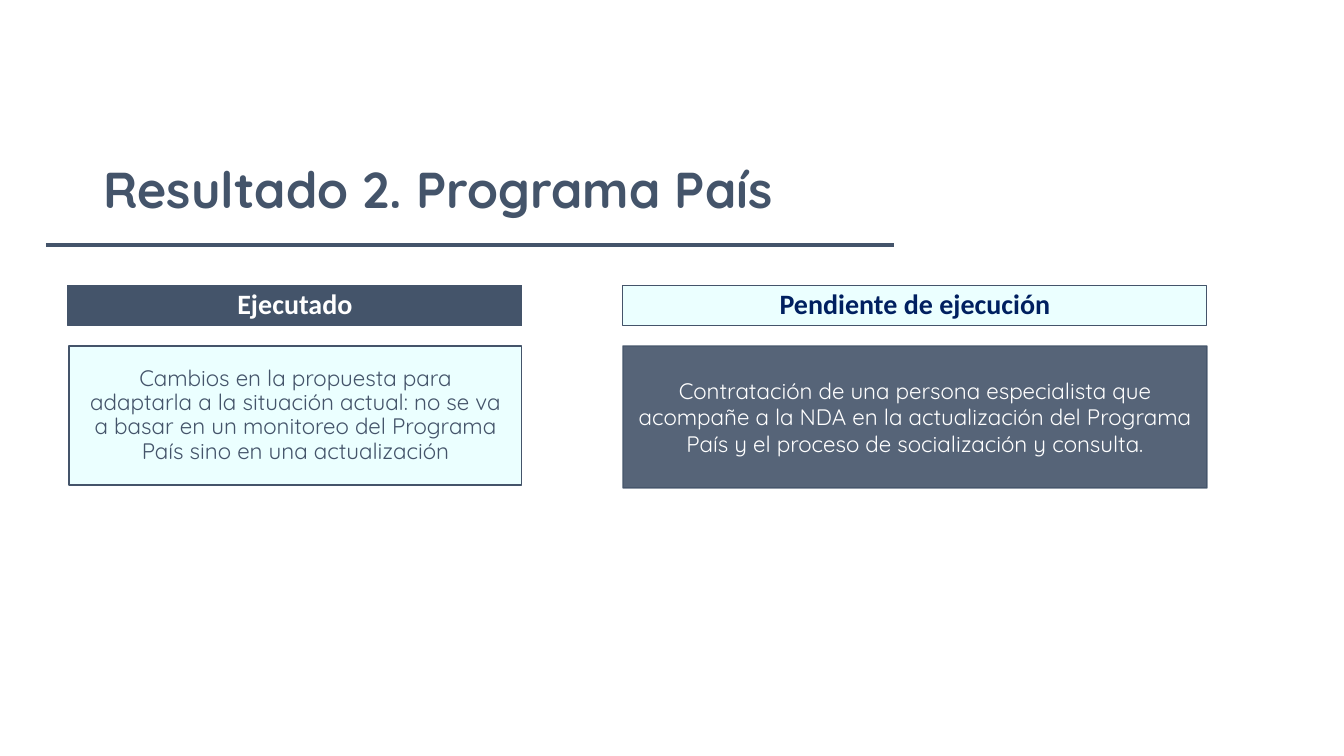
"""Build the slide on the status of Resultado 2, Programa País."""
import pptx
import pptx.dml.color
import pptx.enum.shapes
import pptx.enum.text
import pptx.oxml.ns
import pptx.util
from lxml import etree

PX = 914400 / 100.8
SLATE, MINT, NAVY, WHITE = "44546A", "EBFFFF", "002060", "FFFFFF"


def color(value):
    return pptx.dml.color.RGBColor.from_string(value)


def write(shape, text, size, ink, font="Quicksand", bold=False, spacing=0.9, inset=(10, 5)):
    frame = shape.text_frame
    frame.word_wrap = True
    frame.vertical_anchor = pptx.enum.text.MSO_ANCHOR.MIDDLE
    frame.margin_left = frame.margin_right = round(inset[0] * PX)
    frame.margin_top = frame.margin_bottom = round(inset[1] * PX)
    paragraph = frame.paragraphs[0]
    paragraph.alignment = pptx.enum.text.PP_ALIGN.CENTER
    paragraph.line_spacing = spacing
    run = paragraph.add_run()
    run.text = text
    run.font.name = font
    run.font.size = pptx.util.Pt(size)
    run.font.bold = bold
    run.font.color.rgb = color(ink)


presentation = pptx.Presentation()
presentation.slide_width = round(1344 * PX)
presentation.slide_height = round(756 * PX)
slide = presentation.slides.add_slide(presentation.slide_layouts[6])

title = slide.shapes.add_textbox(*[round(length * PX) for length in (46, 151, 784, 82)])
write(title, "Resultado 2. Programa País", 36, SLATE, bold=True)

rule = slide.shapes.add_connector(
    pptx.enum.shapes.MSO_CONNECTOR.STRAIGHT,
    *[round(length * PX) for length in (46, 245, 894, 245)])
rule.line.color.rgb = color(SLATE)
rule.line.width = pptx.util.Pt(2.25)
etree.SubElement(rule._element.spPr, pptx.oxml.ns.qn("a:effectLst"))

header = {"size": 20, "font": "Calibri", "bold": True, "inset": (19, 11)}
boxes = [
    ((68, 285, 454, 41), SLATE, 0.75, 100, "Ejecutado", {"ink": WHITE, **header}),
    ((623, 285, 584, 41), MINT, 0.75, 100, "Pendiente de ejecución", {"ink": NAVY, **header}),
    ((69, 346, 453, 139), MINT, 0.75, 100,
     "Cambios en la propuesta para adaptarla a la situación actual: no se va a basar "
     "en un monitoreo del Programa País sino en una actualización",
     {"size": 16, "ink": SLATE, "inset": (19, 11)}),
    ((623, 346, 584, 142), SLATE, 1, 90,
     "Contratación de una persona especialista que acompañe a la NDA en la actualización "
     "del Programa País y el proceso de socialización y consulta.",
     {"size": 16, "ink": WHITE, "spacing": 1.0}),
]
for place, fill, line_width, opacity, text, text_format in boxes:
    box = slide.shapes.add_shape(
        pptx.enum.shapes.MSO_SHAPE.RECTANGLE, *[round(length * PX) for length in place])
    box.shadow.inherit = False
    box.fill.solid()
    box.fill.fore_color.rgb = color(fill)
    box.line.color.rgb = color(SLATE)
    box.line.width = pptx.util.Pt(line_width)
    if opacity < 100:
        for tint in box._element.spPr.iter(pptx.oxml.ns.qn("a:srgbClr")):
            etree.SubElement(tint, pptx.oxml.ns.qn("a:alpha"), val=str(opacity * 1000))
    write(box, text, **text_format)

presentation.save("out.pptx")
